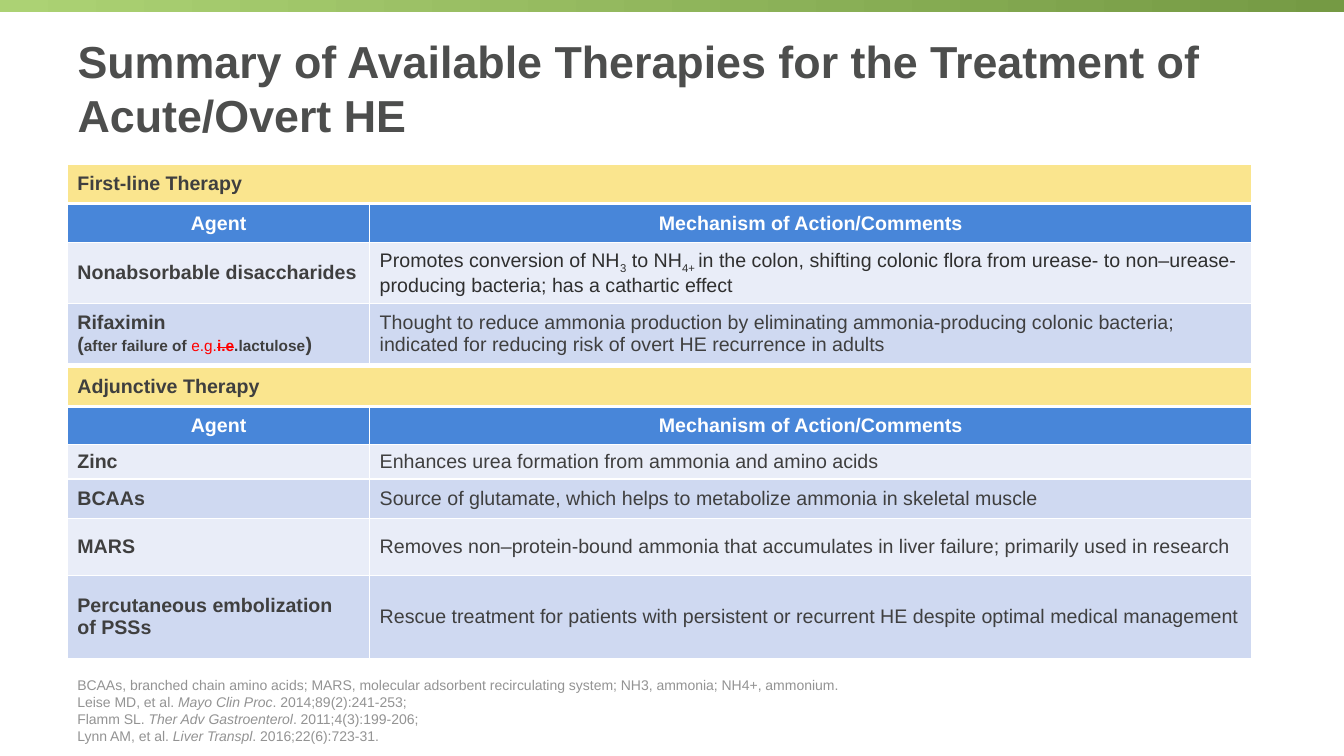
from dataclasses import dataclass

from lxml import etree
from pptx import Presentation
from pptx.dml.color import RGBColor
from pptx.enum.shapes import MSO_SHAPE
from pptx.enum.text import MSO_ANCHOR, MSO_AUTO_SIZE, PP_ALIGN
from pptx.oxml.ns import qn
from pptx.util import Cm, Pt

RECTANGLE = MSO_SHAPE.RECTANGLE
MIDDLE, BOTTOM = MSO_ANCHOR.MIDDLE, MSO_ANCHOR.BOTTOM
LEFT, CENTER = PP_ALIGN.LEFT, PP_ALIGN.CENTER
NO_AUTOFIT = MSO_AUTO_SIZE.NONE
TITLE_ONLY_LAYOUT = 5


@dataclass(frozen=True)
class Theme:
    font: str = "Arial"
    title: str = "4D4E4D"
    text: str = "3F3F3F"
    dark_text: str = "2F2F2F"
    footnote: str = "939393"
    white: str = "FFFFFF"
    edit: str = "FF0000"
    band: str = "FAE58E"
    header: str = "4886D9"
    light_row: str = "E9EDF8"
    dark_row: str = "CFD9F1"
    bar_start: str = "ACD274"
    bar_end: str = "759A44"
    title_size: int = 32
    table_size: int = 14
    small_size: int = 11
    footnote_size: int = 10


THEME = Theme()
SMALL = {"size": THEME.small_size}
SUBSCRIPT = {"baseline": "-25000"}
ITALIC = {"italic": True}

COLUMN_WIDTHS = (7.62, 22.23)
COLUMN_HEADS = ("Agent", "Mechanism of Action/Comments")

FIRST_LINE = [
    ("Nonabsorbable disaccharides",
     [("Promotes conversion of NH", {}), ("3", SUBSCRIPT), (" to NH", {}), ("4+ ", SUBSCRIPT),
      ("in the colon, shifting colonic flora from urease- to non–urease-producing bacteria; "
       "has a cathartic effect", {})]),
    ([("Rifaximin ", {}), ("\n", {}), ("(", {}), ("after failure of ", SMALL),
      ("e.g.", {**SMALL, "color": THEME.edit, "bold": False}),
      ("i.e", {**SMALL, "color": THEME.edit, "strike": "sngStrike"}),
      (".lactulose", SMALL), (")", {})],
     "Thought to reduce ammonia production by eliminating ammonia-producing colonic bacteria; "
     "indicated for reducing risk of overt HE recurrence in adults"),
]
ADJUNCTIVE = [
    ("Zinc", "Enhances urea formation from ammonia and amino acids"),
    ("BCAAs", "Source of glutamate, which helps to metabolize ammonia in skeletal muscle"),
    ("MARS", "Removes non–protein-bound ammonia that accumulates in liver failure; "
             "primarily used in research"),
    ([("Percutaneous embolization ", {}), ("\n", {}), ("of PSSs", {})],
     "Rescue treatment for patients with persistent or recurrent HE despite optimal "
     "medical management"),
]
FOOTNOTES = [
    [("BCAAs, branched chain amino acids; MARS, molecular adsorbent recirculating system; "
      "NH3, ammonia; NH4+, ammonium.", {})],
    [("Leise MD, et al. ", {}), ("Mayo Clin Proc", ITALIC), (". 2014;89(2):241-253;", {})],
    [("Flamm SL. ", {}), ("Ther Adv Gastroenterol", ITALIC), (". 2011;4(3):199-206;", {})],
    [("Lynn AM, et al. ", {}), ("Liver Transpl", ITALIC), (". 2016;22(6):723-31.", {})],
]


def rgb(value):
    return RGBColor.from_string(value)


def write(paragraph, content, size, color, bold=False, alignment=LEFT):
    """Fill a paragraph from a string or from (text, style changes) pieces."""
    paragraph.alignment = alignment
    pieces = [(content, {})] if isinstance(content, str) else content
    for text, style in pieces:
        if text == "\n":
            paragraph.add_line_break()
            continue
        run = paragraph.add_run()
        run.text = text
        run.font.name = THEME.font
        run.font.size = Pt(style.get("size", size))
        run.font.bold = style.get("bold", bold)
        run.font.italic = style.get("italic", False)
        run.font.color.rgb = rgb(style.get("color", color))
        for attribute in ("baseline", "strike"):
            if attribute in style:
                run.font._element.set(attribute, style[attribute])


def set_borders(cell, top=1, bottom=1):
    properties = cell._tc.get_or_add_tcPr()
    for side, width in (("L", 1), ("R", 1), ("T", top), ("B", bottom)):
        line = etree.SubElement(properties, qn(f"a:ln{side}"), w=str(Pt(width)))
        fill = etree.SubElement(line, qn("a:solidFill"))
        etree.SubElement(fill, qn("a:srgbClr"), val=THEME.white)


def style_cell(cell, fill, **borders):
    set_borders(cell, **borders)
    cell.fill.solid()
    cell.fill.fore_color.rgb = rgb(fill)
    cell.vertical_anchor = MIDDLE
    cell.margin_left = cell.margin_right = Cm(0.25)
    cell.margin_top = cell.margin_bottom = Cm(0.1)


def add_top_bar(slide, left, top, width, height):
    bar = slide.shapes.add_shape(RECTANGLE, Cm(left), Cm(top), Cm(width), Cm(height))
    bar.shadow.inherit = False
    bar.line.fill.background()
    bar.fill.gradient()
    bar.fill.gradient_angle = 0
    for stop, color in zip(bar.fill.gradient_stops, (THEME.bar_start, THEME.bar_end)):
        stop.color.rgb = rgb(color)


def add_title(slide, left, top, width, height):
    title = slide.shapes.title
    title.left, title.top, title.width, title.height = map(Cm, (left, top, width, height))
    frame = title.text_frame
    frame.word_wrap = True
    frame.auto_size = NO_AUTOFIT
    frame.vertical_anchor = MIDDLE
    write(frame.paragraphs[0],
          "Summary of Available Therapies for the Treatment of Acute/Overt HE",
          THEME.title_size, THEME.title, bold=True)


def add_therapy_table(slide, left, top, heading, therapies, row_heights,
                      first_comment_color=THEME.text):
    table = slide.shapes.add_table(
        len(row_heights), len(COLUMN_WIDTHS), Cm(left), Cm(top),
        Cm(sum(COLUMN_WIDTHS)), Cm(sum(row_heights))).table
    for column, width in zip(table.columns, COLUMN_WIDTHS):
        column.width = Cm(width)
    for row, height in zip(table.rows, row_heights):
        row.height = Cm(height)

    for cell in table.rows[0].cells:
        style_cell(cell, THEME.band, bottom=3)
    table.cell(0, 0).merge(table.cell(0, 1))
    write(table.cell(0, 0).text_frame.paragraphs[0], heading,
          THEME.table_size, THEME.text, bold=True)

    for cell, head in zip(table.rows[1].cells, COLUMN_HEADS):
        style_cell(cell, THEME.header, top=3)
        write(cell.text_frame.paragraphs[0], head,
              THEME.table_size, THEME.white, bold=True, alignment=CENTER)

    for index, therapy in enumerate(therapies):
        fill = THEME.dark_row if index % 2 else THEME.light_row
        comment_color = THEME.text if index else first_comment_color
        agent_cell, comment_cell = table.rows[index + 2].cells
        for cell, content, color, bold in ((agent_cell, therapy[0], THEME.text, True),
                                           (comment_cell, therapy[1], comment_color, False)):
            style_cell(cell, fill)
            write(cell.text_frame.paragraphs[0], content, THEME.table_size, color, bold)


def add_footnotes(slide, left, top, width, height):
    frame = slide.shapes.add_textbox(Cm(left), Cm(top), Cm(width), Cm(height)).text_frame
    frame.word_wrap = True
    frame.vertical_anchor = BOTTOM
    for index, footnote in enumerate(FOOTNOTES):
        paragraph = frame.add_paragraph() if index else frame.paragraphs[0]
        write(paragraph, footnote, THEME.footnote_size, THEME.footnote)


def main():
    presentation = Presentation()
    presentation.slide_width, presentation.slide_height = Cm(33.87), Cm(19.05)
    slide = presentation.slides.add_slide(presentation.slide_layouts[TITLE_ONLY_LAYOUT])
    left, width = 1.7, sum(COLUMN_WIDTHS)
    add_top_bar(slide, 0, 0, 33.87, 0.3)
    add_title(slide, left, 0.56, width, 3.3)
    add_therapy_table(slide, left, 4.14, "First-line Therapy", FIRST_LINE,
                      (0.99, 0.99, 1.52, 1.52), THEME.dark_text)
    add_therapy_table(slide, left, 9.27, "Adjunctive Therapy", ADJUNCTIVE,
                      (0.97, 0.97, 0.86, 0.99, 1.45, 2.08))
    add_footnotes(slide, left, 16.71, width, 2.16)
    presentation.save("out.pptx")


if __name__ == "__main__":
    main()
